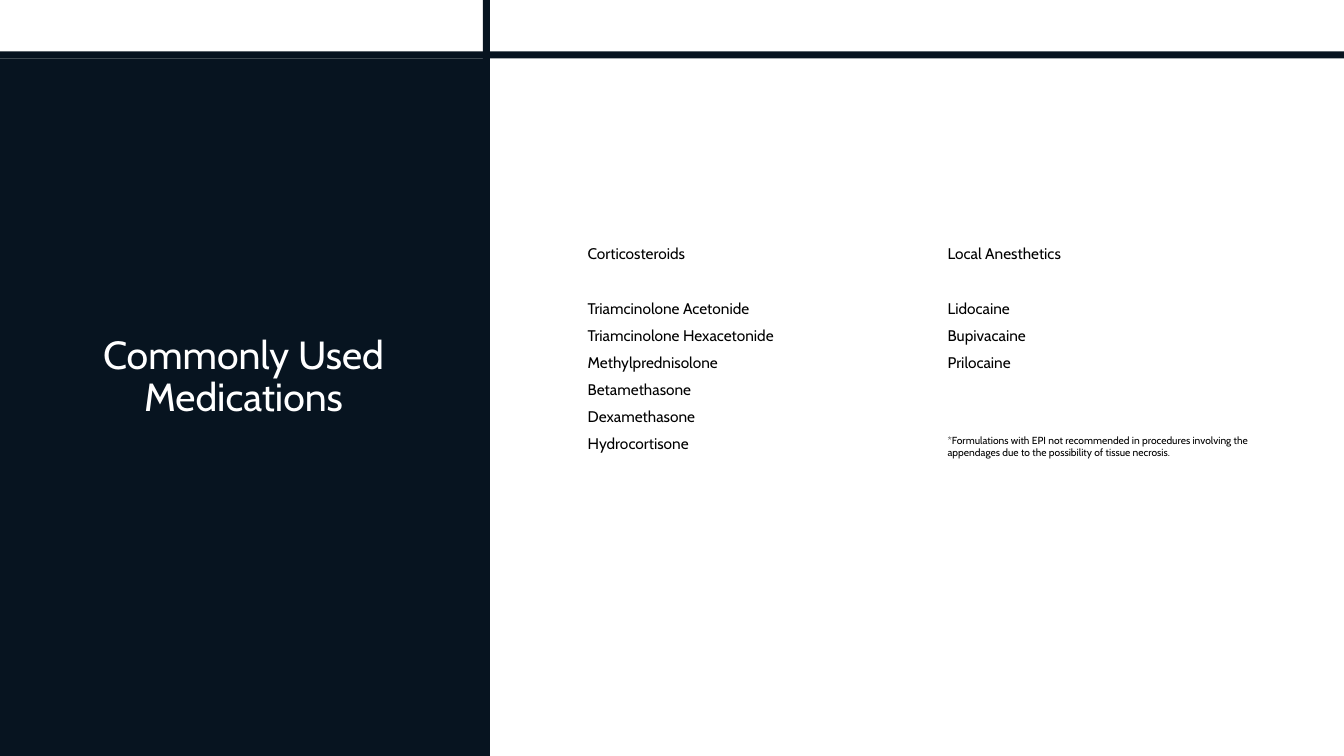
from pptx import Presentation
from pptx import util as u
from pptx.dml.color import RGBColor
from pptx.enum import shapes, text

NAVY, WHITE, BLACK = "071420", "FFFFFF", "000000"
SLIDE_WIDTH, SLIDE_HEIGHT = 13.33, 7.5
BAND = 0.07
PANEL_WIDTH, PANEL_TOP = 4.86, 0.58
HEADING_TOP, HEADING_HEIGHT, LIST_HEIGHT = 2.37, 0.55, 2.46
COLUMN_WIDTH = 3.45
FOOTNOTE = ("*Formulations with EPI not recommended in procedures involving the "
            "appendages due to the possibility of tissue necrosis.")
COLUMNS = [
    (5.73, "Corticosteroids",
     ["Triamcinolone Acetonide", "Triamcinolone Hexacetonide", "Methylprednisolone",
      "Betamethasone", "Dexamethasone", "Hydrocortisone"], None),
    (9.3, "Local Anesthetics", ["Lidocaine", "Bupivacaine", "Prilocaine"], FOOTNOTE),
]


def color(hex_string):
    return RGBColor.from_string(hex_string)


class MedicationSlide:
    font_name = "Cabin"
    body_size = 11
    footnote_size = 7.3
    space_after = 6
    footnote_gap = 38.5

    def __init__(self, presentation):
        self.slide = presentation.slides.add_slide(presentation.slide_layouts[6])

    def block(self, left, top, width, height):
        """Add a plain navy rectangle."""
        shape = self.slide.shapes.add_shape(
            shapes.MSO_SHAPE.RECTANGLE, *map(u.Inches, (left, top, width, height)))
        shape.shadow.inherit = False
        shape.fill.solid()
        shape.fill.fore_color.rgb = color(NAVY)
        shape.line.fill.background()

    def text_frame(self, left, top, width, height):
        shape = self.slide.shapes.add_textbox(*map(u.Inches, (left, top, width, height)))
        shape.text_frame.word_wrap = True
        return shape.text_frame

    def style(self, paragraph, size, hex_string):
        paragraph.font.name = self.font_name
        paragraph.font.size = u.Pt(size)
        paragraph.font.color.rgb = color(hex_string)

    def title(self, words, left, top, width, height):
        frame = self.text_frame(left, top, width, height)
        frame.vertical_anchor = text.MSO_ANCHOR.MIDDLE
        paragraph = frame.paragraphs[0]
        paragraph.text = words
        paragraph.alignment = text.PP_ALIGN.CENTER
        paragraph.line_spacing = 0.9
        self.style(paragraph, 28, WHITE)

    def lines(self, items, left, top, width, height):
        """Add a text box with one body paragraph per item."""
        frame = self.text_frame(left, top, width, height)
        frame.text = "\n".join(items)
        for paragraph in frame.paragraphs:
            paragraph.space_after = u.Pt(self.space_after)
            self.style(paragraph, self.body_size, BLACK)
        return frame

    def footnote(self, frame, words):
        paragraph = frame.add_paragraph()
        paragraph.text = words
        paragraph.space_before = u.Pt(self.footnote_gap)
        paragraph.space_after = u.Pt(self.space_after)
        self.style(paragraph, self.footnote_size, BLACK)

    def column(self, left, heading, medications, note):
        self.lines([heading], left, HEADING_TOP, COLUMN_WIDTH, HEADING_HEIGHT)
        frame = self.lines(medications, left, HEADING_TOP + HEADING_HEIGHT,
                           COLUMN_WIDTH, LIST_HEIGHT)
        if note:
            self.footnote(frame, note)


def main():
    presentation = Presentation()
    presentation.slide_width = u.Inches(SLIDE_WIDTH)
    presentation.slide_height = u.Inches(SLIDE_HEIGHT)

    page = MedicationSlide(presentation)
    page.block(0, PANEL_TOP, PANEL_WIDTH, SLIDE_HEIGHT - PANEL_TOP)
    page.title("Commonly Used Medications", 0.66, 0.84, 3.51, 5.82)
    page.block(PANEL_WIDTH - BAND, 0, BAND, SLIDE_HEIGHT)
    page.block(0, PANEL_TOP - BAND, SLIDE_WIDTH, BAND)
    for column in COLUMNS:
        page.column(*column)

    presentation.save("out.pptx")


if __name__ == "__main__":
    main()
